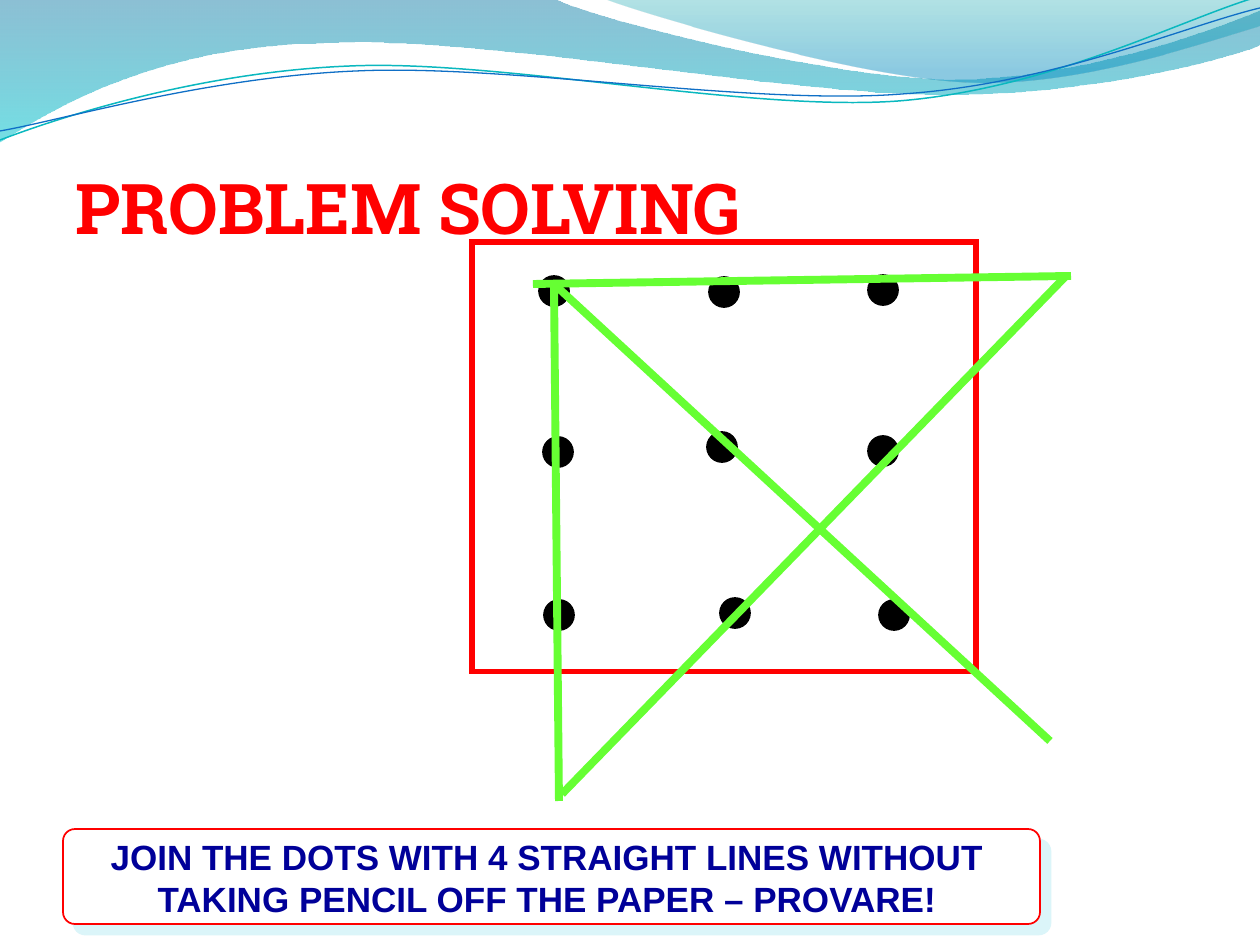
from dataclasses import dataclass

from lxml.etree import SubElement
from pptx import Presentation
from pptx.dml.color import RGBColor
from pptx.enum.shapes import MSO_CONNECTOR as Connector, MSO_SHAPE as Shape
from pptx.enum.text import MSO_ANCHOR as Anchor, MSO_AUTO_SIZE as AutoSize, PP_ALIGN as Align
from pptx.oxml.ns import qn
from pptx.util import Emu, Inches, Pt

PX = Inches(1) / 126
Point = tuple[int, int]


@dataclass
class Stop:
    position: float
    color: str
    opacity: int


@dataclass
class Wave:
    start: Point
    segments: list[tuple[Point, ...]]  # one point: line; three: Bezier curve
    stops: tuple[Stop, ...] = ()
    line_color: str = ""
    line_width: float = 0


@dataclass
class Box:
    left: int
    top: int
    width: int
    height: int

    def emu(self) -> list[Emu]:
        return [px(v) for v in (self.left, self.top, self.width, self.height)]


WAVES = [
    Wave((0, 0), [
        ((554, -1),),
        ((600, 21), (837, 79), (955, 79)),
        ((1074, 79), (1207, 33), (1260, 11)),
        ((1261, 45),),
        ((1239, 55), (1096, 96), (940, 94)),
        ((784, 95), (481, 35), (324, 43)),
        ((163, 45), (58, 105), (-1, 142)),
    ], stops=(Stop(0, "0074A1", 45), Stop(1, "00C6CF", 55))),
    Wave((604, -1), [
        ((641, 14), (859, 78), (969, 82)),
        ((1079, 87), (1211, 40), (1260, 26)),
        ((1260, 0),),
    ], stops=(Stop(0, "00A1A9", 30), Stop(0.8, "008BBF", 45))),
    Wave((0, 140), [
        ((60, 117), (199, 72), (349, 66)),
        ((498, 59), (747, 112), (898, 101)),
        ((1050, 89), (1182, 19), (1257, -3)),
    ], line_color="0AB8BF", line_width=0.85),
    Wave((0, 131), [
        ((59, 121), (207, 77), (357, 71)),
        ((508, 64), (752, 106), (903, 94)),
        ((1053, 84), (1185, 26), (1260, 8)),
    ], line_color="0F6FC6", line_width=0.75),
]
DOT_SIZE = 30
DOTS = [(539, 276), (709, 277), (868, 275),
        (543, 437), (544, 600), (868, 436),
        (707, 432), (720, 598), (879, 600)]
STROKES = [((1050, 741), (554, 284)), ((554, 281), (559, 801)),
           ((562, 794), (1066, 276)), ((1071, 276), (533, 284))]
CAPTION = ["JOIN THE DOTS WITH 4 STRAIGHT LINES WITHOUT",
           "TAKING PENCIL OFF THE PAPER – PROVARE!"]


def px(value: float) -> Emu:
    return Emu(round(value * PX))


def rgb(color: str) -> RGBColor:
    return RGBColor.from_string(color)


def set_line(line, color: str, width: float) -> None:
    line.color.rgb = rgb(color)
    line.width = Pt(width)


def set_font(para, name: str, size: int, color: str) -> None:
    font = para.font
    font.name, font.size, font.bold = name, Pt(size), True
    font.color.rgb = rgb(color)


def bend(shape, segments: list[tuple[Point, ...]]) -> None:
    """Gather each run of three outline points into one Bezier curve."""
    steps = iter(list(shape._element.spPr.iter(qn("a:lnTo"))))
    for segment in segments:
        group = [next(steps) for _ in segment]
        if len(group) == 3:
            group[0].tag = qn("a:cubicBezTo")
            for step in group[1:]:
                group[0].append(step[0])
                step.getparent().remove(step)


def add_wave(page, wave: Wave) -> None:
    builder = page.shapes.build_freeform(*map(px, wave.start))
    builder.add_line_segments(
        [(px(x), px(y)) for segment in wave.segments for x, y in segment],
        close=bool(wave.stops))
    shape = builder.convert_to_shape()
    bend(shape, wave.segments)
    shape.shadow.inherit = False
    if not wave.stops:
        shape.fill.background()
        set_line(shape.line, wave.line_color, wave.line_width)
        return
    shape.line.fill.background()
    shape.fill.gradient()
    shape.fill.gradient_angle = 270
    for target, stop in zip(shape.fill.gradient_stops, wave.stops):
        target.position = stop.position
        target.color.rgb = rgb(stop.color)
    for color, stop in zip(shape._element.spPr.iter(qn("a:srgbClr")), wave.stops):
        SubElement(color, qn("a:alpha"), val=str(stop.opacity * 1000))


def add_shape(page, kind: Shape, box: Box, fill: str, line: str, width: float):
    shape = page.shapes.add_shape(kind, *box.emu())
    shape.shadow.inherit = False
    shape.fill.solid()
    shape.fill.fore_color.rgb = rgb(fill)
    set_line(shape.line, line, width)
    SubElement(shape._element.spPr.find(qn("a:ln")), qn("a:miter"), lim="800000")
    return shape


def add_stroke(page, start: Point, end: Point) -> None:
    stroke = page.shapes.add_connector(Connector.STRAIGHT, *map(px, start + end))
    set_line(stroke.line, "66FF33", 4.5)
    SubElement(stroke._element.spPr, qn("a:effectLst"))


def add_caption(page) -> None:
    panel = add_shape(page, Shape.ROUNDED_RECTANGLE, Box(63, 829, 977, 95),
                      "FFFFFF", "FF0000", 1)
    panel.adjustments[0] = 0.125
    effects = panel._element.spPr.find(qn("a:effectLst"))
    shadow = SubElement(effects, qn("a:outerShdw"), blurRad="0", dist=str(Pt(8.5)),
                        dir=str(45 * 60000), algn="ctr", rotWithShape="0")
    SubElement(shadow, qn("a:srgbClr"), val="DBF5F9")

    frame = page.shapes.add_textbox(*Box(23, 829, 1048, 96).emu()).text_frame
    frame.word_wrap = True
    frame.auto_size = AutoSize.SHAPE_TO_FIT_TEXT
    frame.text = "\n".join(CAPTION)
    for para in frame.paragraphs:
        para.alignment = Align.CENTER
        set_font(para, "Arial", 20, "000099")


def add_title(page) -> None:
    title = page.shapes.title
    title.left, title.top, title.width, title.height = Box(63, 97, 1134, 158).emu()
    frame = title.text_frame
    frame.text = "PROBLEM SOLVING"
    frame.vertical_anchor = Anchor.BOTTOM
    para = frame.paragraphs[0]
    para.alignment = Align.LEFT
    set_font(para, "Roboto Slab", 40, "FF0000")


def main() -> None:
    deck = Presentation()
    deck.slide_width, deck.slide_height = Inches(10), Inches(7.5)
    page = deck.slides.add_slide(deck.slide_layouts[5])

    # Header waves and title
    for wave in WAVES:
        add_wave(page, wave)
    add_title(page)

    # Instruction
    add_caption(page)

    # Nine-dot puzzle and its four-line solution
    add_shape(page, Shape.RECTANGLE, Box(472, 242, 504, 430), "FFFFFF", "FF0000", 3)
    for left, top in DOTS:
        add_shape(page, Shape.OVAL, Box(left, top, DOT_SIZE, DOT_SIZE), "000000", "000000", 1)
    for start, end in STROKES:
        add_stroke(page, start, end)

    deck.save("out.pptx")


if __name__ == "__main__":
    main()
